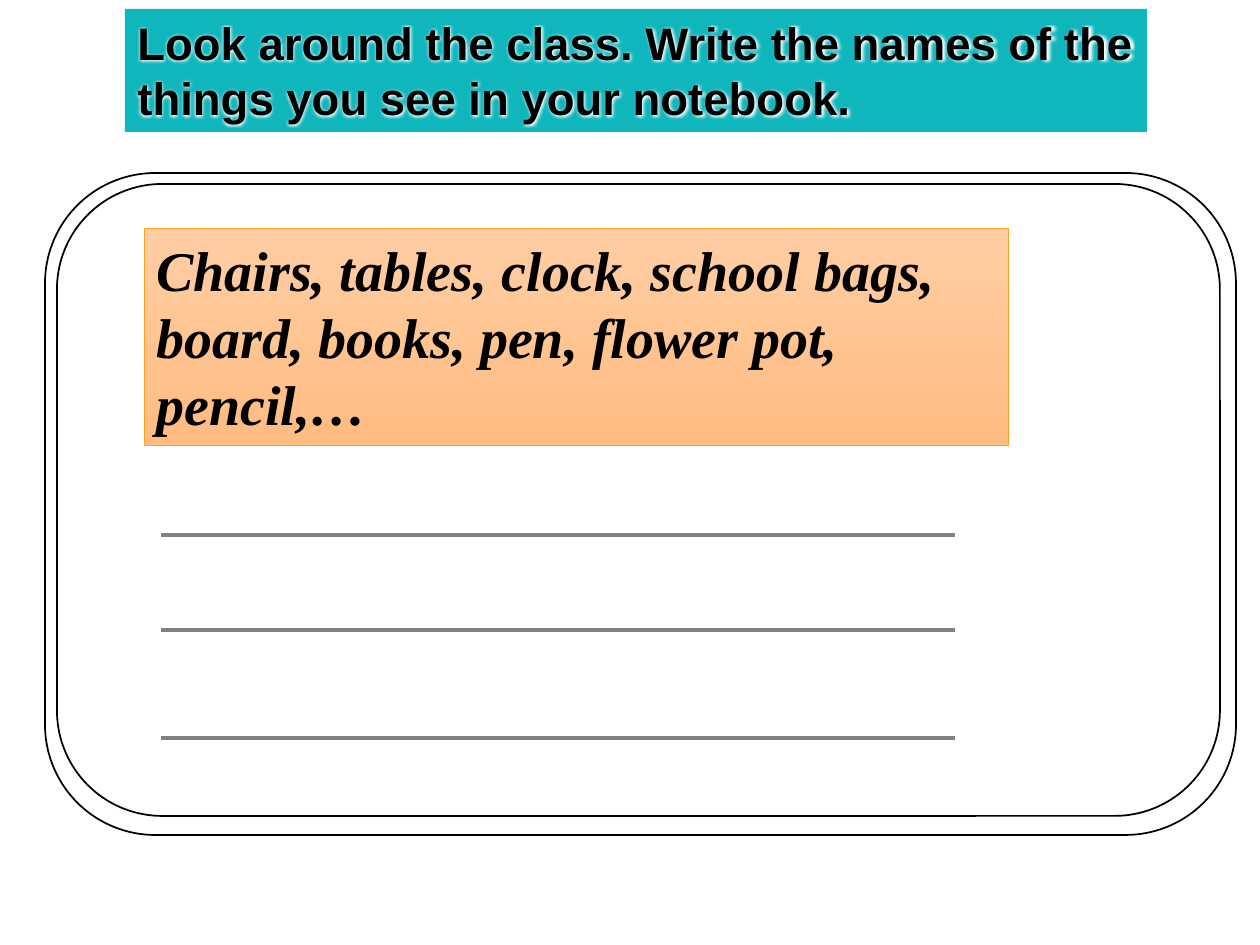
from lxml import etree
from pptx import Presentation
from pptx.dml.color import RGBColor
from pptx.enum.shapes import MSO_CONNECTOR, MSO_SHAPE
from pptx.enum.text import MSO_ANCHOR, PP_ALIGN
from pptx.oxml.ns import qn
from pptx.util import Emu, Pt

RECTANGLE = MSO_SHAPE.RECTANGLE
ROUNDED = MSO_SHAPE.ROUNDED_RECTANGLE
STRAIGHT = MSO_CONNECTOR.STRAIGHT
TOP, LEFT = MSO_ANCHOR.TOP, PP_ALIGN.LEFT

EMU_PER_PX = 914400 // 126
BLACK = RGBColor(0x00, 0x00, 0x00)
WHITE = RGBColor(0xFF, 0xFF, 0xFF)
TEAL = RGBColor(0x0F, 0xB7, 0xBD)
GREY = RGBColor(0x80, 0x80, 0x80)
ORANGE = RGBColor(0xFE, 0xA0, 0x22)
PEACH_LIGHT = RGBColor(0xFF, 0xCD, 0xA3)
PEACH_DARK = RGBColor(0xFF, 0xBC, 0x81)


def px(length):
    return Emu(length * EMU_PER_PX)


class SlideBuilder:
    def __init__(self, slide):
        self.slide = slide

    def box(self, kind, bounds, fill, line=None, width=1):
        """Add a shape; a pair of fill colours gives a top-to-bottom gradient."""
        shape = self.slide.shapes.add_shape(kind, *map(px, bounds))
        shape.shadow.inherit = False
        if isinstance(fill, RGBColor):
            shape.fill.solid()
            shape.fill.fore_color.rgb = fill
        else:
            shape.fill.gradient()
            shape.fill.gradient_angle = 270
            for stop, color in zip(shape.fill.gradient_stops, fill):
                stop.color.rgb = color
        if line is None:
            shape.line.fill.background()
        else:
            shape.line.color.rgb = line
            shape.line.width = Pt(width)
        return shape

    def label(self, shape, text, font_name, size, italic=False):
        frame = shape.text_frame
        frame.word_wrap = True
        frame.vertical_anchor = TOP
        paragraph = frame.paragraphs[0]
        paragraph.alignment = LEFT
        run = paragraph.add_run()
        run.text = text
        font = paragraph.font
        font.name = font_name
        font.size = Pt(size)
        font.bold = True
        font.italic = italic
        font.color.rgb = BLACK
        return run

    def glow(self, run, color, radius):
        properties = run._r.get_or_add_rPr()
        effects = etree.SubElement(properties, qn("a:effectLst"))
        glow = etree.SubElement(effects, qn("a:glow"), rad=str(Pt(radius)))
        etree.SubElement(glow, qn("a:srgbClr"), val=str(color))

    def rule(self, left, right, y):
        connector = self.slide.shapes.add_connector(
            STRAIGHT, px(left), px(y), px(right), px(y))
        connector.line.color.rgb = GREY
        connector.line.width = Pt(2.25)
        etree.SubElement(connector._element.spPr, qn("a:effectLst"))


def main():
    presentation = Presentation()
    presentation.slide_width = px(1260)
    presentation.slide_height = px(945)
    builder = SlideBuilder(
        presentation.slides.add_slide(presentation.slide_layouts[6]))

    title = builder.box(RECTANGLE, (125, 9, 1022, 123), TEAL)
    title_run = builder.label(
        title,
        "Look around the class. Write the names of the things you see in your notebook.",
        "Arial", 26)
    builder.glow(title_run, WHITE, 4)

    for frame_bounds in ((45, 173, 1191, 662), (57, 184, 1163, 632)):
        builder.box(ROUNDED, frame_bounds, WHITE, BLACK)

    for y in (535, 630, 738):
        builder.rule(161, 955, y)

    answer = builder.box(RECTANGLE, (144, 229, 864, 217),
                         (PEACH_LIGHT, PEACH_DARK), ORANGE, 0.5)
    builder.label(
        answer,
        "Chairs, tables, clock, school bags, board, books, pen, flower pot, pencil,…",
        "Times New Roman", 32, italic=True)

    presentation.save("out.pptx")


if __name__ == "__main__":
    main()
